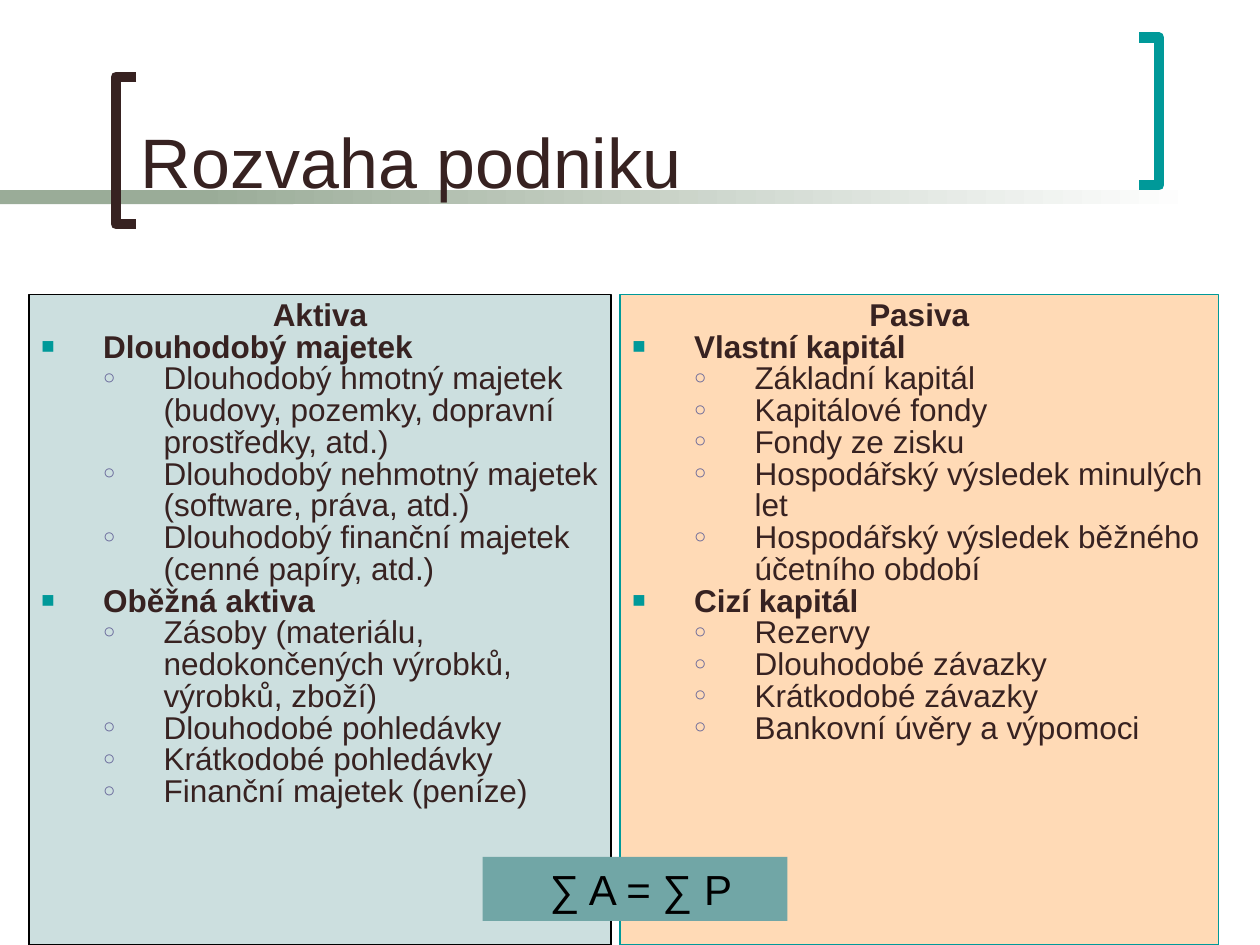
"""Build the balance sheet slide: assets, liabilities and their equality."""
from lxml import etree
from pptx import Presentation
from pptx.dml.color import RGBColor
from pptx.enum.shapes import MSO_SHAPE
from pptx.enum.text import MSO_ANCHOR, PP_ALIGN
from pptx.oxml.ns import qn
from pptx.util import Inches, Pt

RECT = MSO_SHAPE.RECTANGLE
TOP, BOTTOM = MSO_ANCHOR.TOP, MSO_ANCHOR.BOTTOM
LEFT, CENTER = PP_ALIGN.LEFT, PP_ALIGN.CENTER

WIDTH, HEIGHT = Inches(10), Inches(7.5)
COL, ROW = WIDTH / 100, HEIGHT / 75

BLACK = RGBColor(0x00, 0x00, 0x00)
WHITE = RGBColor(0xFF, 0xFF, 0xFF)
BROWN = RGBColor(0x37, 0x22, 0x21)
TEAL = RGBColor(0x00, 0x99, 0x99)
SAGE = RGBColor(0x9A, 0xAC, 0x98)
MIST = RGBColor(0xCC, 0xDF, 0xDF)
PEACH = RGBColor(0xFF, 0xCC, 0x99)
SEA = RGBColor(0x71, 0xA6, 0xA6)
SLATE = RGBColor(0x66, 0x66, 0x99)

FONT = "Arial"
MARKS = (("■", TEAL, 70), ("○", SLATE, 65))
INDENTS = ((0.49, 0.49), (0.97, 0.48))

ASSETS = (
    ("Dlouhodobý majetek", (
        "Dlouhodobý hmotný majetek (budovy, pozemky, dopravní prostředky, atd.)",
        "Dlouhodobý nehmotný majetek (software, práva, atd.)",
        "Dlouhodobý finanční majetek (cenné papíry, atd.)")),
    ("Oběžná aktiva", (
        "Zásoby (materiálu, nedokončených výrobků, výrobků, zboží)",
        "Dlouhodobé pohledávky",
        "Krátkodobé pohledávky",
        "Finanční majetek (peníze)")),
)
CLAIMS = (
    ("Vlastní kapitál", (
        "Základní kapitál",
        "Kapitálové fondy",
        "Fondy ze zisku",
        "Hospodářský výsledek minulých let",
        "Hospodářský výsledek běžného účetního období")),
    ("Cizí kapitál", (
        "Rezervy",
        "Dlouhodobé závazky",
        "Krátkodobé závazky",
        "Bankovní úvěry a výpomoci")),
)


def place(x, y, w, h):
    """Turn grid columns and rows into slide lengths."""
    return round(x * COL), round(y * ROW), round(w * COL), round(h * ROW)


def add_box(slide, area, fill, line=None, weight=0):
    """Add a flat rectangle, outlined only if a line colour is given."""
    box = slide.shapes.add_shape(RECT, *place(*area))
    box.shadow.inherit = False
    box.fill.solid()
    box.fill.fore_color.rgb = fill
    if line is None:
        box.line.fill.background()
    else:
        box.line.color.rgb = line
        box.line.width = Pt(weight)
    box.text_frame.word_wrap = True
    box.text_frame.vertical_anchor = TOP
    return box


def fade(box, start, end):
    """Blend a box from one colour to another, left to right."""
    box.fill.gradient()
    box.fill.gradient_angle = 0
    for stop, color in zip(box.fill.gradient_stops, (start, end)):
        stop.color.rgb = color


def set_alpha(box, share):
    """Make a solid fill opaque to the given percentage."""
    color = box.fill._xPr.find(qn("a:solidFill"))[0]
    etree.SubElement(color, qn("a:alpha"), val=str(share * 1000))


def add_bracket(slide, x, y, turn, color):
    """Draw a square bracket with its spine at x and arms toward turn."""
    arm, rise = 1.6 * turn, 11.7
    points = [(x + arm, y), (x, y), (x, y + rise), (x + arm, y + rise)]
    spots = [(round(a * COL), round(b * ROW)) for a, b in points]
    path = slide.shapes.build_freeform(*spots[0])
    path.add_line_segments(spots[1:], close=False)
    mark = path.convert_to_shape()
    mark.shadow.inherit = False
    mark.fill.background()
    mark.line.color.rgb = color
    mark.line.width = Pt(6)


def write(para, text, size, color, align=LEFT, bold=False):
    """Fill a paragraph with text in one style."""
    para.text = text
    para.alignment = align
    font = para.font
    font.name, font.size, font.bold = FONT, Pt(size), bold
    font.color.rgb = color


def add_bullet(para, level):
    """Give a paragraph the indent and mark of its level."""
    char, color, size = MARKS[level]
    margin, hang = INDENTS[level]
    para.level = level
    props = para._p.get_or_add_pPr()
    props.set("marL", str(Inches(margin)))
    props.set("indent", str(-Inches(hang)))
    tint = etree.SubElement(props, qn("a:buClr"))
    etree.SubElement(tint, qn("a:srgbClr"), val=str(color))
    etree.SubElement(props, qn("a:buSzPct"), val=str(size * 1000))
    etree.SubElement(props, qn("a:buFont"), typeface=FONT)
    etree.SubElement(props, qn("a:buChar"), char=char)


def add_side(box, head, groups):
    """Write one side of the balance sheet into its box."""
    frame = box.text_frame
    rows = [(text, level)
            for name, items in groups
            for text, level in [(name, 0)] + [(item, 1) for item in items]]
    first = frame.paragraphs[0]
    first.line_spacing = 0.84
    write(first, head, 18, BROWN, CENTER, True)
    for text, level in rows:
        para = frame.add_paragraph()
        para.line_spacing = 0.84
        add_bullet(para, level)
        write(para, text, 18, BROWN, bold=level == 0)


def add_title(slide, text):
    """Add the slide title, resting on the bottom of its box."""
    frame = slide.shapes.add_textbox(*place(10.2, 1.1, 78.3, 15.5)).text_frame
    frame.word_wrap = True
    frame.vertical_anchor = BOTTOM
    write(frame.paragraphs[0], text, 40, BROWN)


def main():
    """Build and save the slide."""
    deck = Presentation()
    deck.slide_width, deck.slide_height = WIDTH, HEIGHT
    slide = deck.slides.add_slide(deck.slide_layouts[6])

    add_box(slide, (0, 15.1, 23.3, 1.1), SAGE)
    fade(add_box(slide, (15.8, 15.1, 79.2, 1.1), SAGE), SAGE, WHITE)
    add_bracket(slide, 9.2, 6.1, 1, BROWN)
    add_bracket(slide, 92, 3, -1, TEAL)
    add_title(slide, "Rozvaha podniku")

    left = add_box(slide, (2.3, 23.4, 46.2, 51.6), MIST, BLACK)
    add_side(left, "Aktiva", ASSETS)
    right = add_box(slide, (49.2, 23.4, 47.5, 51.6), PEACH, TEAL, 0.75)
    set_alpha(right, 71)
    add_side(right, "Pasiva", CLAIMS)

    total = add_box(slide, (38.3, 68, 24.2, 5.1), SEA)
    write(total.text_frame.paragraphs[0], " ∑ A = ∑ P", 24, BLACK, CENTER)
    deck.save("out.pptx")


if __name__ == "__main__":
    main()
